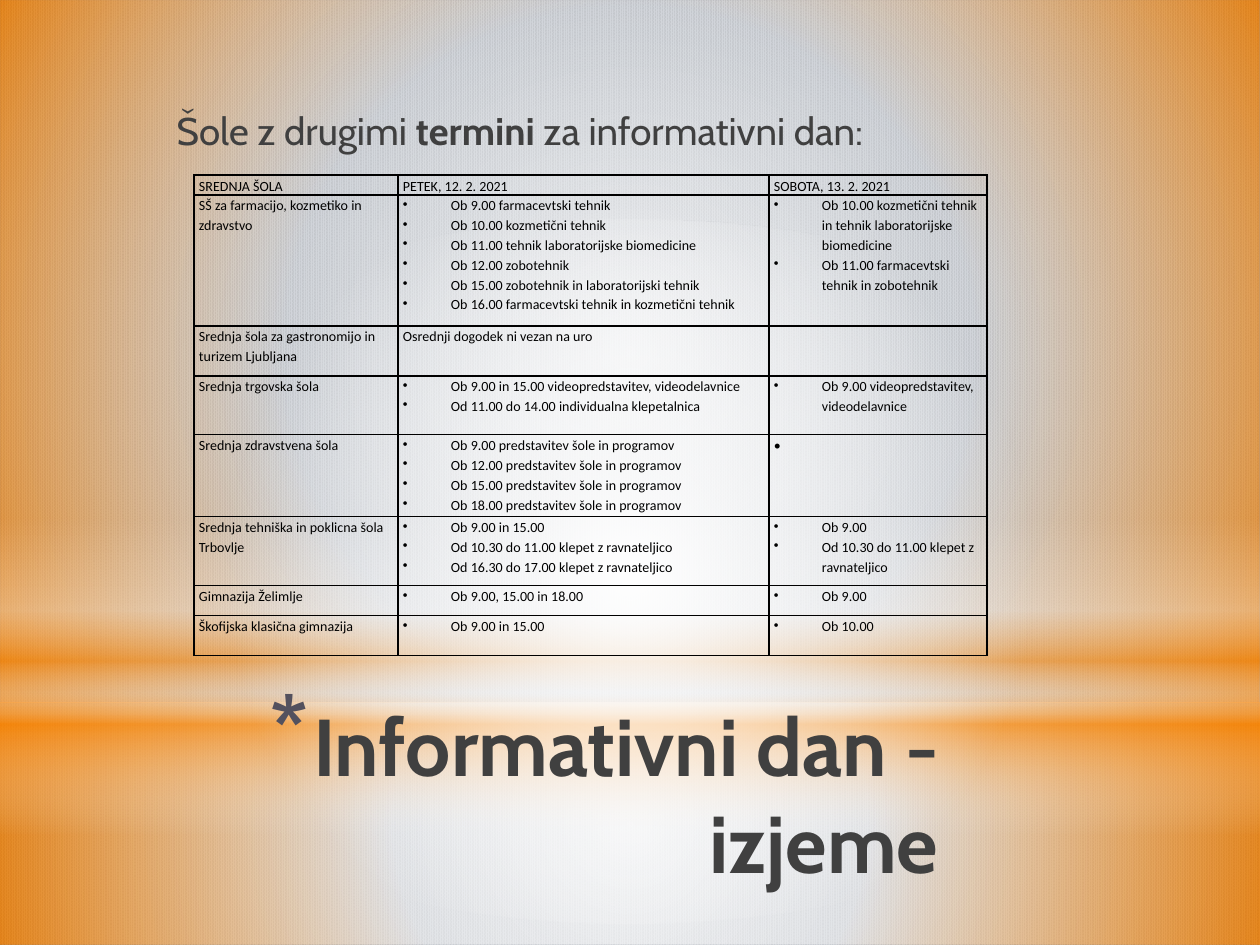
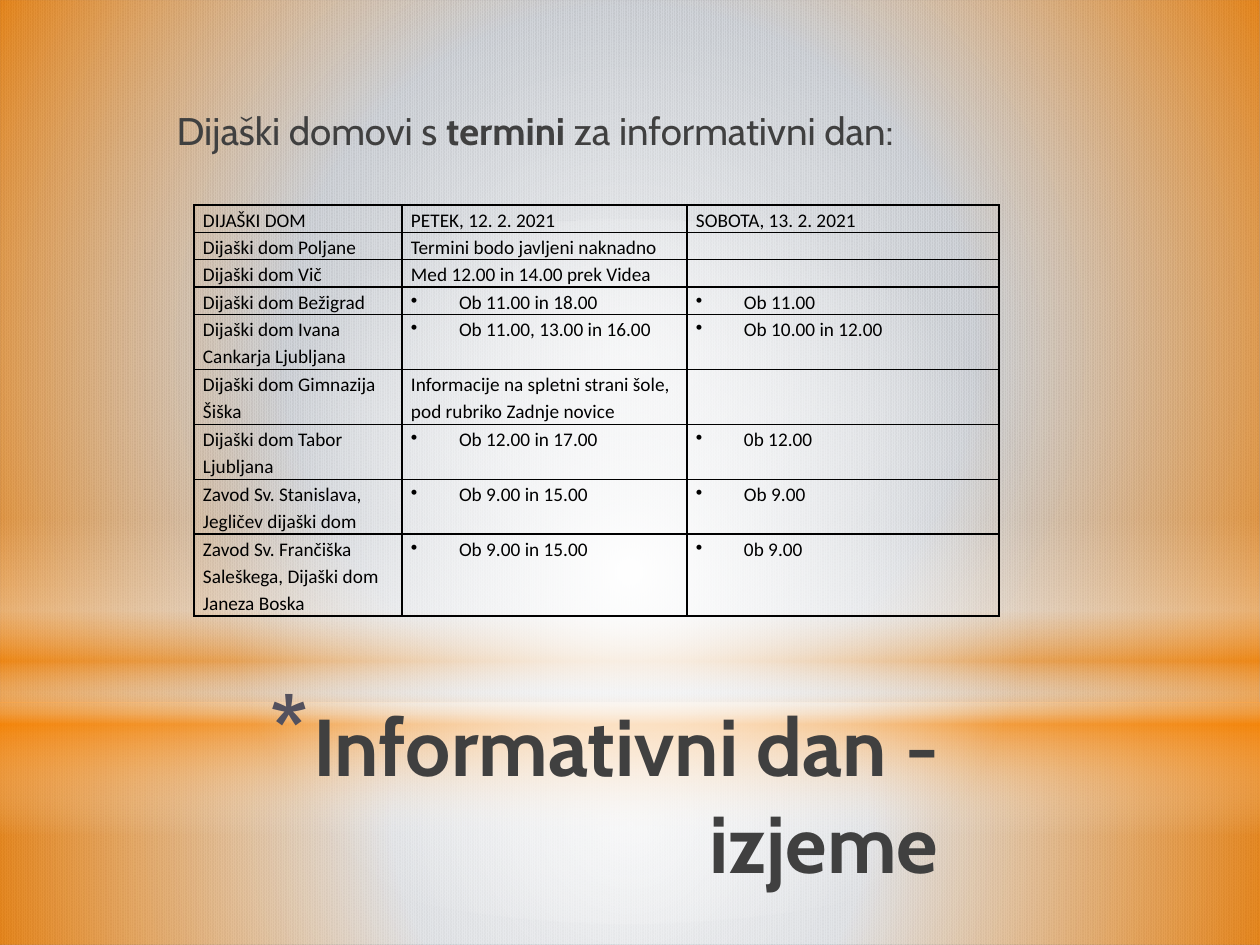
from pptx import Presentation
from pptx import util as u
from pptx.dml.color import RGBColor
from pptx.enum import dml, shapes, text
from pptx.oxml import parse_xml
from pptx.oxml.ns import nsdecls, qn
from pptx.oxml.xmlchemy import OxmlElement

PX = 914400 / 126
COLORS = {
    "weave": "838D9B",
    "weave_back": "606977",
    "glow": "FFFFFF",
    "orange": "FF8600",
    "heading": "404040",
    "asterisk": "53515E",
    "ink": "000000",
}
HEADING_FONT, TABLE_FONT = "Cabin", "Calibri"
TITLE = "Informativni dan - izjeme"
DAYS = ["PETEK, 12. 2. 2021", "SOBOTA, 13. 2. 2021"]

# A string is a plain cell, a list is a bulleted one
SCHOOLS = [
    ["SREDNJA ŠOLA", *DAYS],
    ["SŠ za farmacijo, kozmetiko in zdravstvo",
     ["Ob 9.00 farmacevtski tehnik",
      "Ob 10.00 kozmetični tehnik",
      "Ob 11.00 tehnik laboratorijske biomedicine",
      "Ob 12.00 zobotehnik",
      "Ob 15.00 zobotehnik in laboratorijski tehnik",
      "Ob 16.00 farmacevtski tehnik in kozmetični tehnik"],
     ["Ob 10.00 kozmetični tehnik in tehnik laboratorijske biomedicine",
      "Ob 11.00 farmacevtski tehnik in zobotehnik"]],
    ["Srednja šola za gastronomijo in turizem Ljubljana",
     "Osrednji dogodek ni vezan na uro", ""],
    ["Srednja trgovska šola",
     ["Ob 9.00 in 15.00 videopredstavitev, videodelavnice",
      "Od 11.00 do 14.00 individualna klepetalnica"],
     ["Ob 9.00 videopredstavitev, videodelavnice"]],
    ["Srednja zdravstvena šola",
     [f"Ob {hour}.00 predstavitev šole in programov" for hour in (9, 12, 15, 18)],
     "•"],
    ["Srednja tehniška in poklicna šola Trbovlje",
     ["Ob 9.00 in 15.00",
      "Od 10.30 do 11.00 klepet z ravnateljico",
      "Od 16.30 do 17.00 klepet z ravnateljico"],
     ["Ob 9.00", "Od 10.30 do 11.00 klepet z ravnateljico"]],
    ["Gimnazija Želimlje", ["Ob 9.00, 15.00 in 18.00"], ["Ob 9.00"]],
    ["Škofijska klasična gimnazija", ["Ob 9.00 in 15.00"], ["Ob 10.00"]],
]
DORMS = [
    ["DIJAŠKI DOM", *DAYS],
    ["Dijaški dom Poljane", "Termini bodo javljeni naknadno", ""],
    ["Dijaški dom Vič", "Med 12.00 in 14.00 prek Videa", ""],
    ["Dijaški dom Bežigrad", ["Ob 11.00 in 18.00"], ["Ob 11.00"]],
    ["Dijaški dom Ivana Cankarja Ljubljana",
     ["Ob 11.00, 13.00 in 16.00"], ["Ob 10.00 in 12.00"]],
    ["Dijaški dom Gimnazija Šiška",
     "Informacije na spletni strani šole, pod rubriko Zadnje novice", ""],
    ["Dijaški dom Tabor Ljubljana", ["Ob 12.00 in 17.00"], ["0b 12.00"]],
    ["Zavod Sv. Stanislava, Jegličev dijaški dom",
     ["Ob 9.00 in 15.00"], ["Ob 9.00"]],
    ["Zavod Sv. Frančiška Saleškega, Dijaški dom Janeza Boska",
     ["Ob 9.00 in 15.00"], ["0b 9.00"]],
]


def px(length):
    return u.Emu(round(length * PX))


def rgb(name):
    return RGBColor.from_string(COLORS[name])


def write(paragraph, words, *, font, size, color, bold=False):
    run = paragraph.add_run()
    run.text = words
    run.font.name = font
    run.font.size = u.Pt(size)
    run.font.bold = bold
    run.font.color.rgb = rgb(color)


def set_bullet(paragraph, char, *, margin, indent, color=None, percent=None):
    """Give the paragraph a bullet, or none when char is None."""
    props = paragraph._p.get_or_add_pPr()
    props.set("marL", str(px(margin)))
    props.set("indent", str(px(indent)))
    if color:
        clr = OxmlElement("a:buClr")
        value = OxmlElement("a:srgbClr")
        value.set("val", COLORS[color])
        clr.append(value)
        props.append(clr)
    if percent:
        size = OxmlElement("a:buSzPct")
        size.set("val", str(percent * 1000))
        props.append(size)
    mark = OxmlElement("a:buChar" if char else "a:buNone")
    if char:
        mark.set("char", char)
    props.append(mark)


# Backdrop shared through the master
def set_gradient(shape, stops, radial):
    stop_xml = "".join(
        f'<a:gs pos="{pos * 1000}"><a:srgbClr val="{COLORS[color]}">'
        f'<a:alpha val="{alpha * 1000}"/></a:srgbClr></a:gs>'
        for pos, color, alpha in stops)
    if radial:
        direction = ('<a:path path="circle"><a:fillToRect l="50000" t="50000" '
                     'r="50000" b="50000"/></a:path>')
    else:
        direction = '<a:lin ang="5400000" scaled="0"/>'
    gradient = parse_xml(f'<a:gradFill {nsdecls("a")} rotWithShape="1">'
                         f'<a:gsLst>{stop_xml}</a:gsLst>{direction}</a:gradFill>')
    shape.fill.background()
    props = shape.element.spPr
    props.replace(props.find(qn("a:noFill")), gradient)


def add_backdrop(master, slide):
    weave = master.background.fill
    weave.patterned()
    weave.pattern = dml.MSO_PATTERN.PERCENT_90
    weave.fore_color.rgb = rgb("weave")
    weave.back_color.rgb = rgb("weave_back")

    rect, oval = shapes.MSO_SHAPE.RECTANGLE, shapes.MSO_SHAPE.OVAL
    layers = [
        (rect, 703, 242, True,
         [(0, "glow", 91), (37, "glow", 76), (100, "orange", 79)]),
        (rect, 0, 703, True,
         [(0, "glow", 89), (48, "glow", 62), (100, "orange", 79)]),
        (rect, 519, 315, False,
         [(0, "glow", 0), (29, "glow", 30), (45, "orange", 40),
          (55, "glow", 26), (65, "orange", 60), (100, "glow", 0)]),
        (oval, 220, 703, True, [(0, "glow", 100), (56, "glow", 0)]),
    ]
    for order, (kind, top, height, radial, stops) in enumerate(layers):
        layer = slide.shapes.add_shape(kind, 0, px(top), px(1260), px(height))
        layer.shadow.inherit = False
        layer.line.fill.background()
        set_gradient(layer, stops, radial)
        # Move behind the master's placeholders, under a free id
        layer.element.nvSpPr.cNvPr.set("id", str(100 + order))
        master.shapes.element.insert(2 + order, layer.element)


# Title and lead line
def place(holder, left, top, width, height):
    holder.left, holder.top = px(left), px(top)
    holder.width, holder.height = px(width), px(height)
    frame = holder.text_frame
    frame.auto_size = text.MSO_AUTO_SIZE.NONE
    frame.vertical_anchor = text.MSO_ANCHOR.TOP
    frame.word_wrap = True
    return frame.paragraphs[0]


def add_heading(slide, before, after):
    title = place(slide.shapes.title, 54, 690, 897, 158)
    set_bullet(title, "*", margin=44, indent=-44, color="asterisk", percent=128)
    title.alignment = text.PP_ALIGN.RIGHT
    write(title, TITLE, font=HEADING_FONT, size=46, color="heading", bold=True)

    lead = place(slide.placeholders[1], 158, 101, 882, 479)
    set_bullet(lead, None, margin=6, indent=0)
    lead.space_before, lead.space_after = u.Pt(0), u.Pt(3)
    for words, bold in ((before, False), ("termini", True), (after, False)):
        write(lead, words, font=HEADING_FONT, size=22, color="heading", bold=bold)


# Timetable
def set_borders(cell):
    props = cell._tc.get_or_add_tcPr()
    for order, side in enumerate(("lnL", "lnR", "lnT", "lnB")):
        props.insert(order, parse_xml(
            f'<a:{side} {nsdecls("a")} w="12700"><a:solidFill>'
            f'<a:srgbClr val="{COLORS["ink"]}"/></a:solidFill></a:{side}>'))


def fill_cell(cell, content, size, inset):
    cell.fill.background()
    set_borders(cell)
    cell.margin_left = cell.margin_right = px(inset)
    cell.margin_top = cell.margin_bottom = 0
    bulleted = isinstance(content, list)
    for order, words in enumerate(content if bulleted else [content]):
        frame = cell.text_frame
        line = frame.add_paragraph() if order else frame.paragraphs[0]
        if bulleted:
            set_bullet(line, "•", margin=48, indent=-48)
        line.line_spacing = 1.15
        if words:
            write(line, words, font=TABLE_FONT, size=size, color="ink")
        else:
            line.font.size = u.Pt(size)


def add_timetable(slide, entries, *, top, widths, heights, size, inset):
    table = slide.shapes.add_table(
        len(entries), len(widths), px(194), px(top),
        px(sum(widths)), px(sum(heights))).table
    table.first_row = table.horz_banding = False
    for column, width in zip(table.columns, widths):
        column.width = px(width)
    for row, height, entry in zip(table.rows, heights, entries):
        row.height = px(height)
        for cell, content in zip(row.cells, entry):
            fill_cell(cell, content, size, inset)


def main():
    deck = Presentation()
    deck.slide_width, deck.slide_height = px(1260), px(945)
    schools, dorms = (deck.slides.add_slide(deck.slide_layouts[1])
                      for _ in range(2))
    add_backdrop(deck.slide_master, schools)

    # Schools
    add_heading(schools, "Šole z drugimi ", " za informativni dan:")
    add_timetable(schools, SCHOOLS, top=175, widths=[204, 371, 218],
                  heights=[19, 131, 50, 59, 82, 69, 30, 40], size=8, inset=5)

    # Student dormitories
    add_heading(dorms, "Dijaški domovi s ", " za informativni dan:")
    add_timetable(dorms, DORMS, top=205, widths=[208, 285, 312],
                  heights=[27] * 4 + [55] * 4 + [82], size=11, inset=9)

    deck.save("out.pptx")


if __name__ == "__main__":
    main()
